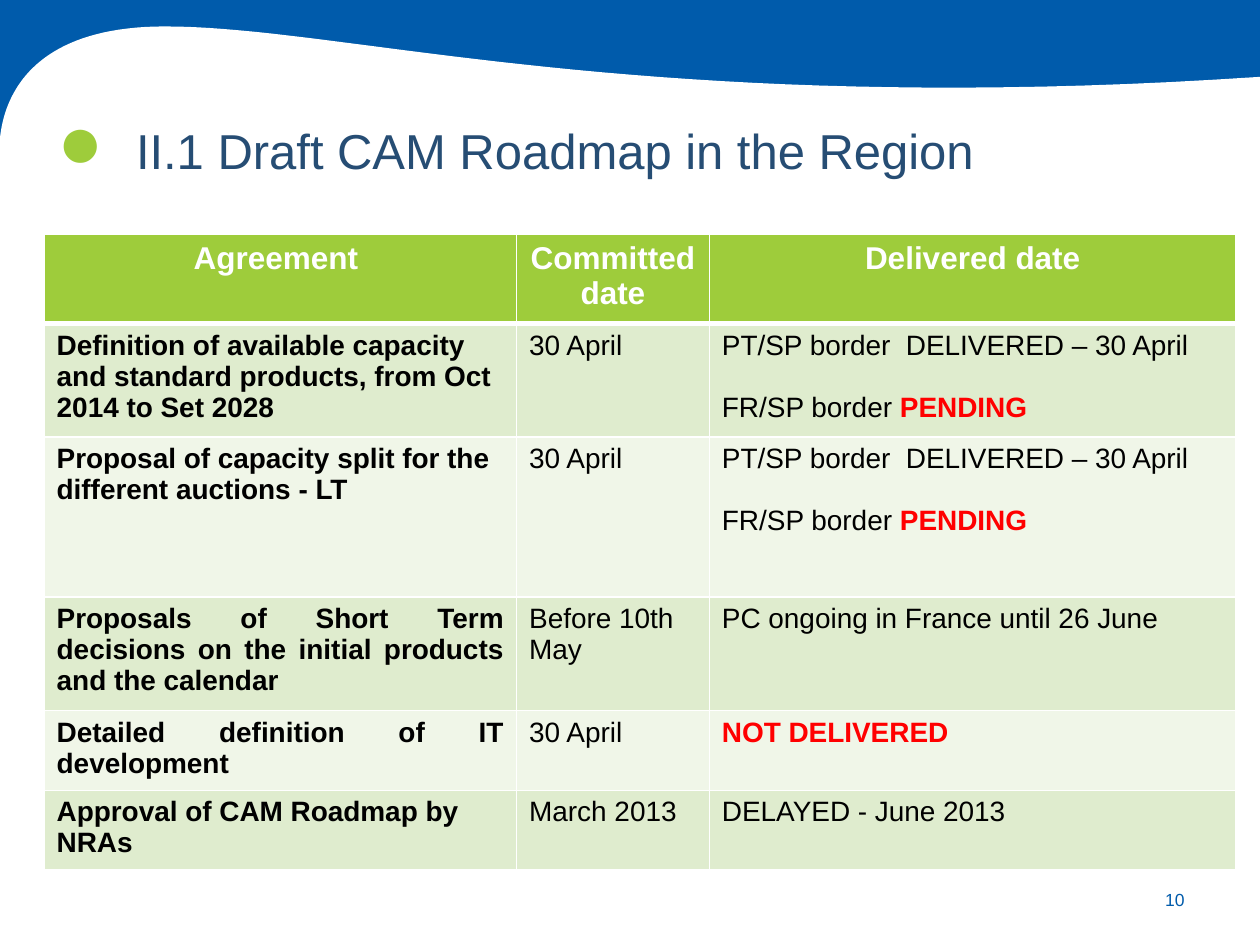
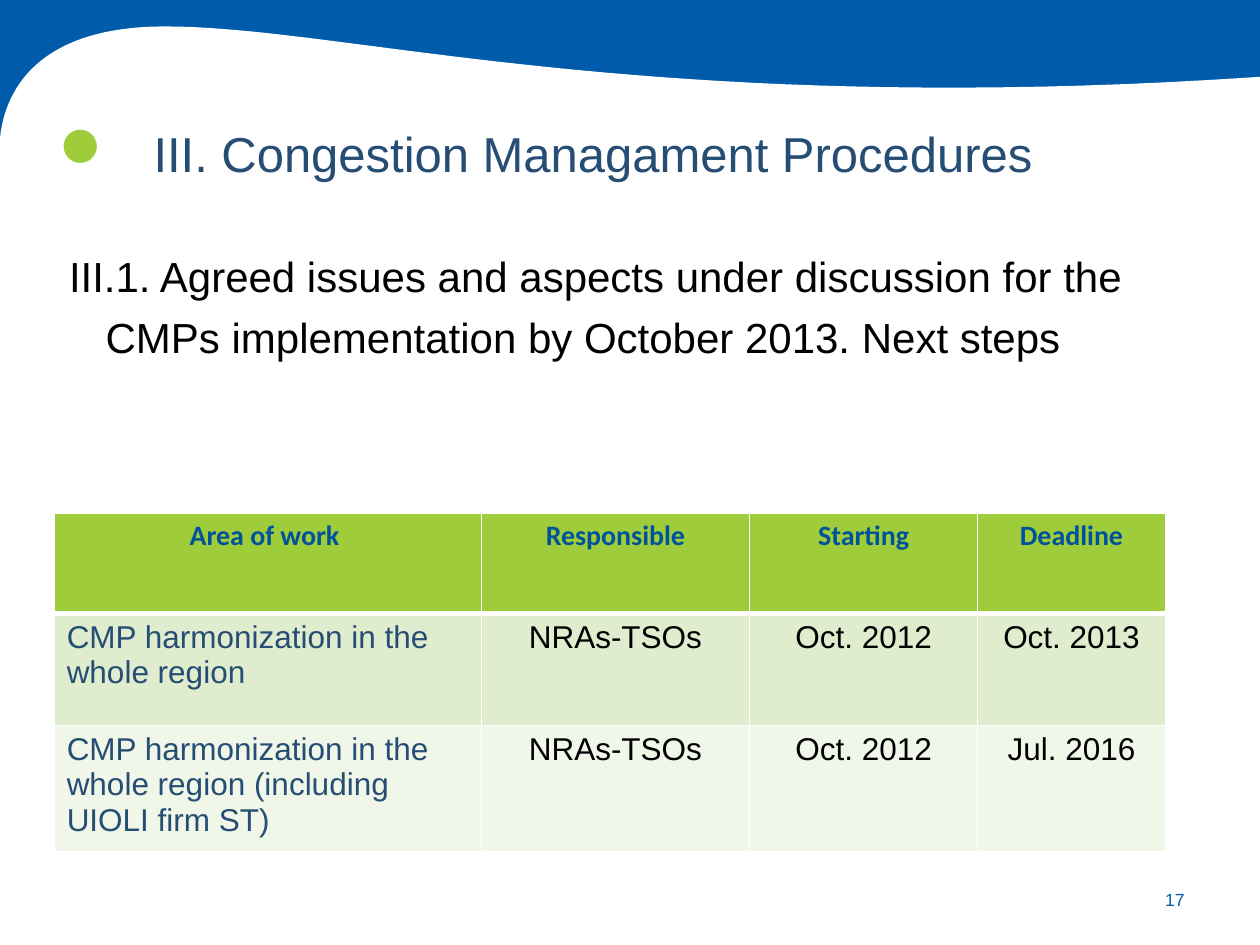
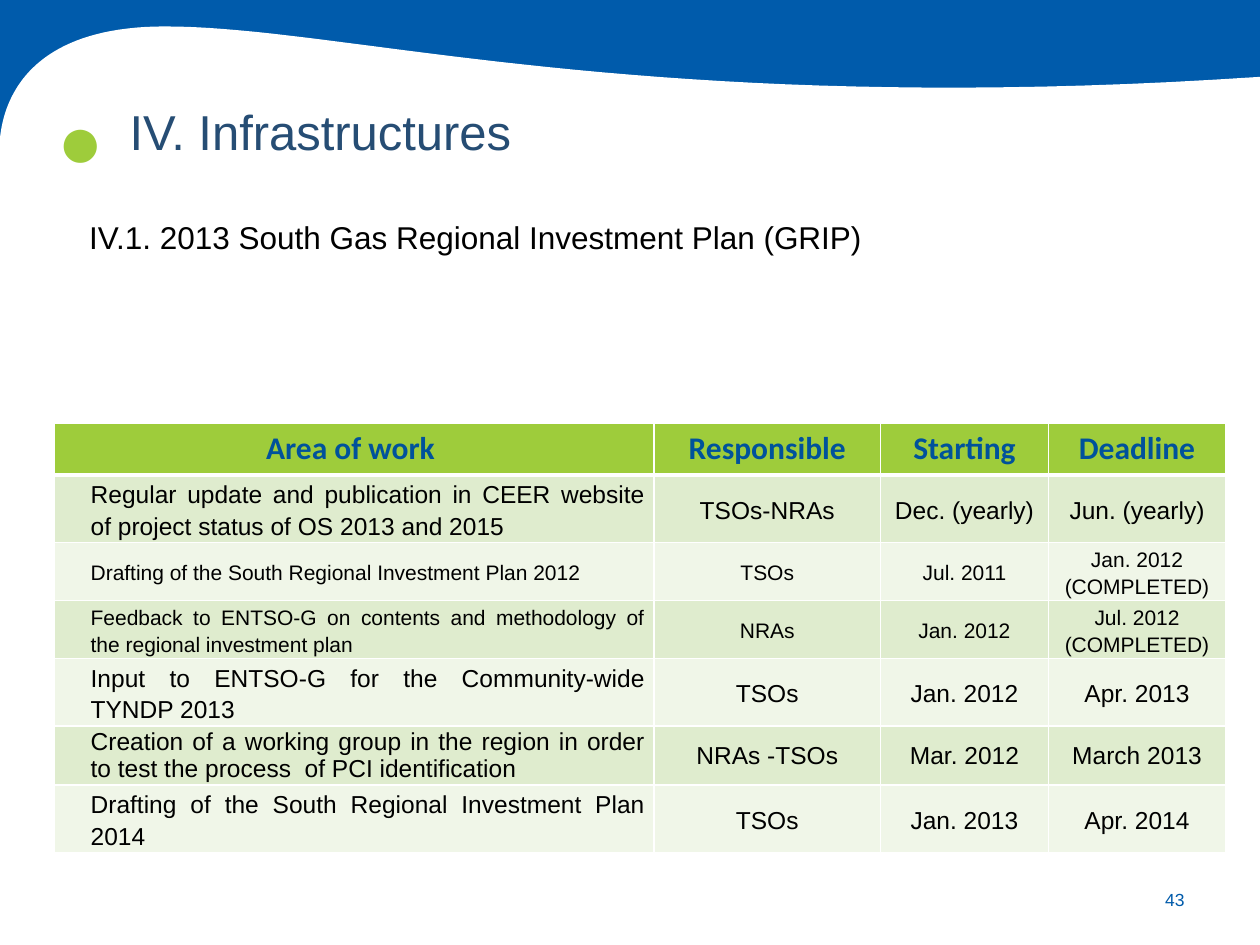
from dataclasses import dataclass

import pptx
import pptx.dml.color
import pptx.enum.shapes
import pptx.enum.text
import pptx.oxml
import pptx.oxml.ns
import pptx.util
from pptx.util import Inches

ALIGN = pptx.enum.text.PP_ALIGN
ANCHOR = pptx.enum.text.MSO_ANCHOR


@dataclass(frozen=True)
class Theme:
    font: str = "Arial"
    header_font: str = "Calibri"
    blue: str = "005BAB"
    header_blue: str = "00529B"
    title_blue: str = "264D74"
    green: str = "9ECC3B"
    white: str = "FFFFFF"
    black: str = "000000"
    alert: str = "FF0000"
    stripes: tuple = ("DFECCE", "F0F6E8")
    title_size: int = 28
    subtitle_size: int = 24
    large: int = 18
    medium: int = 16
    body: int = 14
    small: int = 12
    page_size: int = 10
    dot_size: int = 44


THEME = Theme()
HANGING = dict(indent=(0.39, -0.29), line_spacing=1.2)


def rgb(value):
    return pptx.dml.color.RGBColor.from_string(value)


def styled(text, **fmt):
    return text, fmt


def write_text(frame, text, *, size=THEME.body, color=THEME.black, font=THEME.font,
               bold=False, align=ALIGN.LEFT, indent=None, line_spacing=None, gap=0):
    frame.word_wrap = True
    paragraphs = text if isinstance(text, list) else [text]
    for index, content in enumerate(paragraphs):
        paragraph = frame.paragraphs[0] if index == 0 else frame.add_paragraph()
        paragraph.alignment = align
        if indent:
            properties = paragraph._p.get_or_add_pPr()
            properties.set("marL", str(Inches(indent[0])))
            properties.set("indent", str(Inches(indent[1])))
        if line_spacing:
            paragraph.line_spacing = line_spacing
        if index:
            paragraph.space_before = pptx.util.Pt(gap)
        for part in content if isinstance(content, list) else [content]:
            words, accent = part if isinstance(part, tuple) else (part, {})
            run = paragraph.add_run()
            run.text = words
            run.font.name = font
            run.font.size = pptx.util.Pt(size)
            run.font.bold = accent.get("bold", bold)
            run.font.color.rgb = rgb(accent.get("color", color))


def add_text(slide, text, left, top, width, height, anchor=ANCHOR.TOP, inset=True, **fmt):
    frame = slide.shapes.add_textbox(
        Inches(left), Inches(top), Inches(width), Inches(height)).text_frame
    frame.vertical_anchor = anchor
    if not inset:
        frame.margin_left = frame.margin_right = frame.margin_top = frame.margin_bottom = 0
    write_text(frame, text, **fmt)


def curve(start, control_1, control_2, end, steps=40):
    points = []
    for step in range(1, steps + 1):
        t = step / steps
        weights = ((1 - t) ** 3, 3 * t * (1 - t) ** 2, 3 * t ** 2 * (1 - t), t ** 3)
        points.append(tuple(
            Inches(sum(w * p for w, p in zip(weights, axis)))
            for axis in zip(start, control_1, control_2, end)))
    return points


def paint(shape, color):
    shape.shadow.inherit = False
    shape.fill.solid()
    shape.fill.fore_color.rgb = rgb(color)
    shape.line.fill.background()


def add_wave(slide):
    band = slide.shapes.add_shape(
        pptx.enum.shapes.MSO_SHAPE.RECTANGLE, 0, 0, Inches(10), Inches(1.15))
    paint(band, THEME.blue)
    right, crest, left = (10, 0.61), (1.31, 0.21), (0, 1.1)
    builder = slide.shapes.build_freeform(Inches(10), Inches(0.61))
    builder.add_line_segments(
        curve(right, (5.1, 0.94), (2.76, 0.21), crest)
        + curve(crest, (0.23, 0.21), (0.03, 0.79), left)
        + [(0, Inches(7.5)), (Inches(10), Inches(7.5))])
    paint(builder.convert_to_shape(), THEME.white)


def add_page(deck, number):
    slide = deck.slides.add_slide(deck.slide_layouts[6])
    add_wave(slide)
    add_text(slide, str(number), 8.94, 6.94, 0.56, 0.4, anchor=ANCHOR.MIDDLE,
             size=THEME.page_size, color=THEME.blue, align=ALIGN.RIGHT)
    add_text(slide, "●", 0.36, 0.57, 0.55, 0.94, anchor=ANCHOR.BOTTOM,
             size=THEME.dot_size, color=THEME.green, align=ALIGN.CENTER,
             indent=(0.39, -0.39))
    return slide


def add_title(slide, text, left, top, width, height, **fmt):
    add_text(slide, text, left, top, width, height,
             size=THEME.title_size, color=THEME.title_blue, **fmt)


def set_borders(cell, bottom):
    properties = cell._tc.get_or_add_tcPr()
    for index, (side, points) in enumerate(
            (("lnL", 1), ("lnR", 1), ("lnT", 1), ("lnB", bottom))):
        properties.insert(index, pptx.oxml.parse_xml(
            f'<a:{side} {pptx.oxml.ns.nsdecls("a")} w="{pptx.util.Pt(points)}">'
            f'<a:solidFill><a:srgbClr val="{THEME.white}"/></a:solidFill></a:{side}>'))


def add_grid(slide, left, top, widths, heights, header, rows, header_format,
             column_formats, compact=False):
    table = slide.shapes.add_table(
        len(heights), len(widths), Inches(left), Inches(top),
        Inches(sum(widths)), Inches(sum(heights))).table
    table.horz_banding = False
    for column, width in zip(table.columns, widths):
        column.width = Inches(width)
    for row, height in zip(table.rows, heights):
        row.height = Inches(height)
    for r, (row_format, texts) in enumerate([styled_row(header)] + rows):
        for c, content in enumerate(texts):
            cell = table.cell(r, c)
            text, own = content if isinstance(content, tuple) else (content, {})
            base = column_formats[c] if r else header_format
            cell.fill.solid()
            cell.fill.fore_color.rgb = rgb(THEME.stripes[(r - 1) % 2] if r else THEME.green)
            set_borders(cell, bottom=1 if r else 3)
            if compact and r:
                cell.vertical_anchor = ANCHOR.MIDDLE
                cell.margin_left = cell.margin_right = Inches(0.07)
                cell.margin_top = cell.margin_bottom = 0
            write_text(cell.text_frame, text, **{**base, **row_format, **own})


def styled_row(texts, **fmt):
    return fmt, texts


def build_roadmap(deck):
    slide = add_page(deck, 10)
    add_title(slide, "II.1 Draft CAM Roadmap in the Region", 0.98, 0.68, 8.57, 0.74,
              anchor=ANCHOR.BOTTOM, inset=False, **HANGING)
    alert = dict(color=THEME.alert, bold=True)
    borders = styled(["PT/SP border  DELIVERED – 30 April",
                      ["FR/SP border ", styled("PENDING", **alert)]], gap=17.8)
    plain = dict(size=THEME.medium)
    rows = [
        ["Definition of available capacity and standard products, from Oct 2014 to Set 2028",
         "30 April", borders],
        ["Proposal of capacity split for the different auctions - LT", "30 April", borders],
        [styled("Proposals of Short Term decisions on the initial products and the calendar",
                align=ALIGN.JUSTIFY),
         "Before 10th May", "PC ongoing in France until 26 June"],
        [styled("Detailed definition of IT development", align=ALIGN.JUSTIFY),
         "30 April", styled("NOT DELIVERED", **alert)],
        ["Approval of CAM Roadmap by NRAs", "March 2013", "DELAYED - June 2013"],
    ]
    add_grid(slide, 0.35, 1.86, [3.75, 1.53, 4.18], [0.71, 0.41, 1.27, 0.41, 0.41, 0.41],
             ["Agreement ", "Committed date", "Delivered date"],
             [styled_row(row) for row in rows],
             dict(size=THEME.large, color=THEME.white, bold=True, align=ALIGN.CENTER),
             [dict(plain, bold=True), plain, plain])


def work_header(size):
    return dict(size=size, font=THEME.header_font, color=THEME.header_blue,
                bold=True, align=ALIGN.CENTER)


WORK_COLUMNS = ["Area of work ", "Responsible", "Starting", "Deadline"]


def build_congestion(deck):
    slide = add_page(deck, 17)
    add_title(slide, "III. Congestion Managament Procedures", 0.28, 0.84, 8.75, 0.61,
              align=ALIGN.CENTER, **HANGING)
    add_text(slide, "III.1. Agreed issues and aspects under discussion for the CMPs "
             "implementation by October 2013. Next steps", 0.35, 1.86, 9.53, 1.03,
             size=THEME.subtitle_size, **HANGING)
    rows = [
        ["CMP harmonization in the whole region", "NRAs-TSOs", "Oct. 2012", "Oct. 2013"],
        ["CMP harmonization in the whole region (including UIOLI firm ST)",
         "NRAs-TSOs", "Oct. 2012", "Jul. 2016"],
    ]
    centred = dict(size=THEME.large, align=ALIGN.CENTER)
    add_grid(slide, 0.43, 4.07, [3.39, 2.13, 1.81, 1.49], [0.8, 0.89, 1],
             WORK_COLUMNS, [styled_row(row) for row in rows], work_header(THEME.medium),
             [dict(size=THEME.large, color=THEME.title_blue)] + [centred] * 3)


def build_infrastructures(deck):
    slide = add_page(deck, 43)
    add_title(slide, "IV. Infrastructures", 0.83, 0.76, 8.75, 0.57,
              align=ALIGN.JUSTIFY, indent=(0.09, 0.01))
    add_text(slide, "IV.1. 2013 South Gas Regional Investment Plan (GRIP)",
             0.51, 1.62, 8.55, 0.5, size=THEME.large, **HANGING)
    small = dict(size=THEME.small)
    rows = [
        styled_row(["Regular update and publication in CEER website of project status "
                    "of OS 2013 and 2015", "TSOs-NRAs", "Dec. (yearly)", "Jun. (yearly)"]),
        styled_row(["Drafting of the South Regional Investment Plan 2012", "TSOs",
                    "Jul. 2011", "Jan. 2012 (COMPLETED)"], **small),
        styled_row(["Feedback to ENTSO-G on contents and methodology of the regional "
                    "investment plan", "NRAs", "Jan. 2012", "Jul. 2012 (COMPLETED)"], **small),
        styled_row(["Input to ENTSO-G for the Community-wide TYNDP 2013", "TSOs",
                    "Jan. 2012", "Apr. 2013"]),
        styled_row(["Creation of a working group in the region in order to test the "
                    "process  of PCI identification", "NRAs -TSOs", "Mar. 2012",
                    "March 2013"], line_spacing=1.0),
        styled_row(["Drafting of the South Regional Investment Plan 2014", "TSOs",
                    "Jan. 2013", "Apr. 2014"]),
    ]
    centred = dict(align=ALIGN.CENTER, line_spacing=1.15)
    add_grid(slide, 0.43, 3.36, [4.76, 1.8, 1.33, 1.41], [0.41] * (len(rows) + 1),
             WORK_COLUMNS, rows, work_header(THEME.large),
             [dict(align=ALIGN.JUSTIFY, indent=(0.22, 0), line_spacing=1.15)] + [centred] * 3,
             compact=True)


def main():
    deck = pptx.Presentation()
    deck.slide_width = Inches(10)
    deck.slide_height = Inches(7.5)
    build_roadmap(deck)
    build_congestion(deck)
    build_infrastructures(deck)
    deck.save("out.pptx")


if __name__ == "__main__":
    main()
